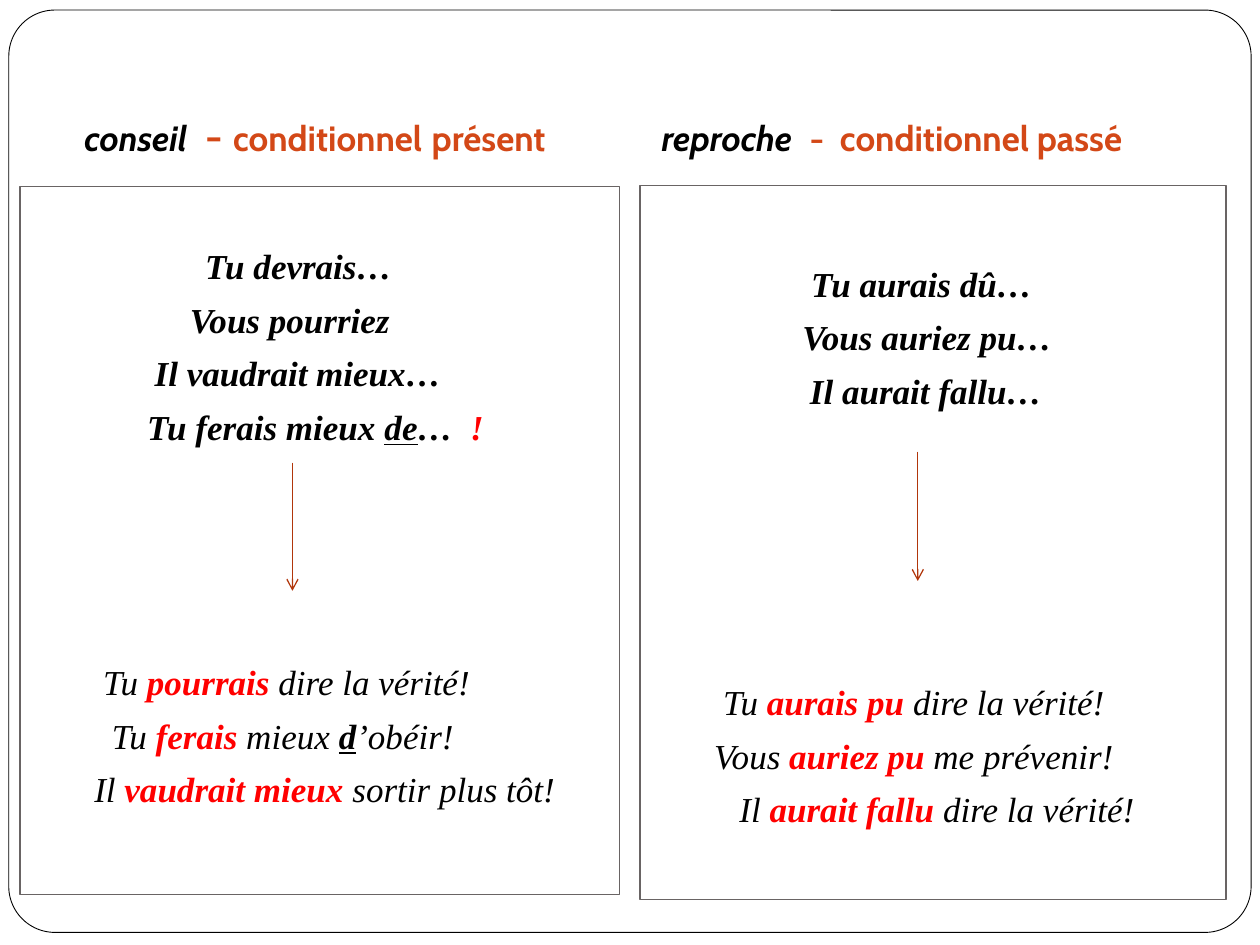
import pptx
import pptx.util
import pptx.dml.color
import pptx.enum.shapes
import pptx.enum.text
import pptx.oxml
import pptx.oxml.ns
import lxml.etree

WIDTH, HEIGHT = 10, 7.5
COLORS = {
    "paper": "FFFFFF", "ink": "000000", "accent": "D34817",
    "verb": "FF0000", "border": "696464", "arrow": "B1360B",
}
SHAPES = pptx.enum.shapes.MSO_SHAPE
ANCHOR = pptx.enum.text.MSO_ANCHOR
inches = pptx.util.Inches

# Run formats
OPENING = dict(bold=True, italic=True)
EXAMPLE = dict(italic=True)
VERB = dict(bold=True, italic=True, color="verb")
STRESSED = dict(bold=True, italic=True, underline=True)
TOPIC = dict(font="Cabin", bold=True, italic=True)
TENSE = dict(font="Cabin", bold=True, color="accent")
WIDE = dict(TENSE, size=24)

# Each line is its indent in inches, then its runs
ADVICE = dict(
    heading=[("conseil", TOPIC), ("  - ", WIDE), ("conditionnel", TENSE),
             (" ", WIDE), ("présent", TENSE)],
    top_inset=0.46, gap=121.6, arrow=(0.454, 0.39, 0.571),
    openings=[
        (1.37, [("Tu devrais…", OPENING)]),
        (1.25, [("Vous pourriez", OPENING)]),
        (0.97, [("Il vaudrait mieux…", OPENING)]),
        (0.91, [("Tu ferais mieux ", OPENING), ("de", STRESSED),
                ("…  ", OPENING), ("!", VERB)]),
    ],
    examples=[
        (0.56, [("Tu ", EXAMPLE), ("pourrais ", VERB), ("dire la vérité!", EXAMPLE)]),
        (0.63, [("Tu ", EXAMPLE), ("ferais", VERB), (" mieux ", EXAMPLE),
                ("d", STRESSED), ("’obéir!", EXAMPLE)]),
        (0.49, [("Il ", EXAMPLE), ("vaudrait mieux ", VERB),
                ("sortir plus tôt!", EXAMPLE)]),
    ],
)
REPROACH = dict(
    heading=[("reproche", TOPIC), (" ", WIDE), (" -  conditionnel passé", TENSE)],
    top_inset=0.61, gap=153.6, arrow=(0.474, 0.373, 0.554),
    openings=[
        (1.26, [("Tu aurais dû…", OPENING)]),
        (1.19, [("Vous auriez pu…", OPENING)]),
        (1.25, [("Il aurait fallu…", OPENING)]),
    ],
    examples=[
        (0.56, [("Tu ", EXAMPLE), ("aurais pu ", VERB), ("dire la vérité!", EXAMPLE)]),
        (0.49, [("Vous ", EXAMPLE), ("auriez pu ", VERB), ("me prévenir!", EXAMPLE)]),
        (0.69, [("Il ", EXAMPLE), ("aurait fallu ", VERB), ("dire la vérité!", EXAMPLE)]),
    ],
)


def rgb(name):
    return pptx.dml.color.RGBColor.from_string(COLORS[name])


def add_text(paragraph, text, font="Times New Roman", size=20, color="ink",
             bold=False, italic=False, underline=False):
    run = paragraph.add_run()
    run.text = text
    run.font.name = font
    run.font.size = pptx.util.Pt(size)
    run.font.color.rgb = rgb(color)
    run.font.bold = bold
    run.font.italic = italic
    run.font.underline = underline


def add_outline(slide, kind, box, line, width, fill=None):
    outline = slide.shapes.add_shape(kind, *map(inches, box))
    outline.shadow.inherit = False
    if fill:
        outline.fill.solid()
        outline.fill.fore_color.rgb = rgb(fill)
    else:
        outline.fill.background()
    outline.line.color.rgb = rgb(line)
    outline.line.width = pptx.util.Pt(width)
    return outline


def add_frame(slide):
    margin = 0.07
    box = (margin, 0.08, WIDTH - 2 * margin, 7.32)
    frame = add_outline(slide, SHAPES.ROUNDED_RECTANGLE, box, "ink", 0.5, "paper")
    frame.adjustments[0] = 0.05


def add_heading(slide, box, runs):
    heading = slide.shapes.add_textbox(*map(inches, box)).text_frame
    heading.word_wrap = True
    heading.vertical_anchor = ANCHOR.BOTTOM
    heading.margin_left = inches(0.17)
    for text, style in runs:
        add_text(heading.paragraphs[0], text, **style)


def add_arrow(slide, box, x_share, start_share, end_share):
    left, top, width, height = box
    x = inches(left + x_share * width)
    arrow = slide.shapes.add_connector(
        pptx.enum.shapes.MSO_CONNECTOR.STRAIGHT,
        x, inches(top + start_share * height), x, inches(top + end_share * height))
    arrow.line.color.rgb = rgb("arrow")
    arrow.line.width = pptx.util.Pt(0.75)
    qn = pptx.oxml.ns.qn
    properties = arrow._element.spPr
    lxml.etree.SubElement(properties.find(qn("a:ln")), qn("a:tailEnd"), type="arrow")
    lxml.etree.SubElement(properties, qn("a:effectLst"))


def add_panel(slide, box, topic):
    panel = add_outline(slide, SHAPES.RECTANGLE, box, "border", 0.75)
    body = panel.text_frame
    body.word_wrap = True
    body.vertical_anchor = ANCHOR.TOP
    body.margin_top = inches(topic["top_inset"])
    lines = topic["openings"] + topic["examples"]
    for number, (indent, runs) in enumerate(lines):
        paragraph = body.add_paragraph() if number else body.paragraphs[0]
        paragraph.alignment = pptx.enum.text.PP_ALIGN.LEFT
        # The arrow stands in the gap before the first example
        first_example = number == len(topic["openings"])
        space = topic["gap"] if first_example else 6.7 if number else 0
        paragraph.space_before = pptx.util.Pt(space)
        paragraph._p.get_or_add_pPr().set("marL", str(inches(indent)))
        for text, style in runs:
            add_text(paragraph, text, **style)
    add_arrow(slide, box, *topic["arrow"])


def main():
    deck = pptx.Presentation()
    deck.slide_width, deck.slide_height = inches(WIDTH), inches(HEIGHT)
    slide = deck.slides.add_slide(deck.slide_layouts[6])
    add_frame(slide)
    columns = [
        (ADVICE, 0.5, (0.16, 1.48, 4.76, 5.62)),
        (REPROACH, 5.08, (5.08, 1.47, 4.65, 5.67)),
    ]
    for topic, heading_left, panel_box in columns:
        add_heading(slide, (heading_left, 0.7, 4.42, 0.62), topic["heading"])
        add_panel(slide, panel_box, topic)
    deck.save("out.pptx")


if __name__ == "__main__":
    main()
